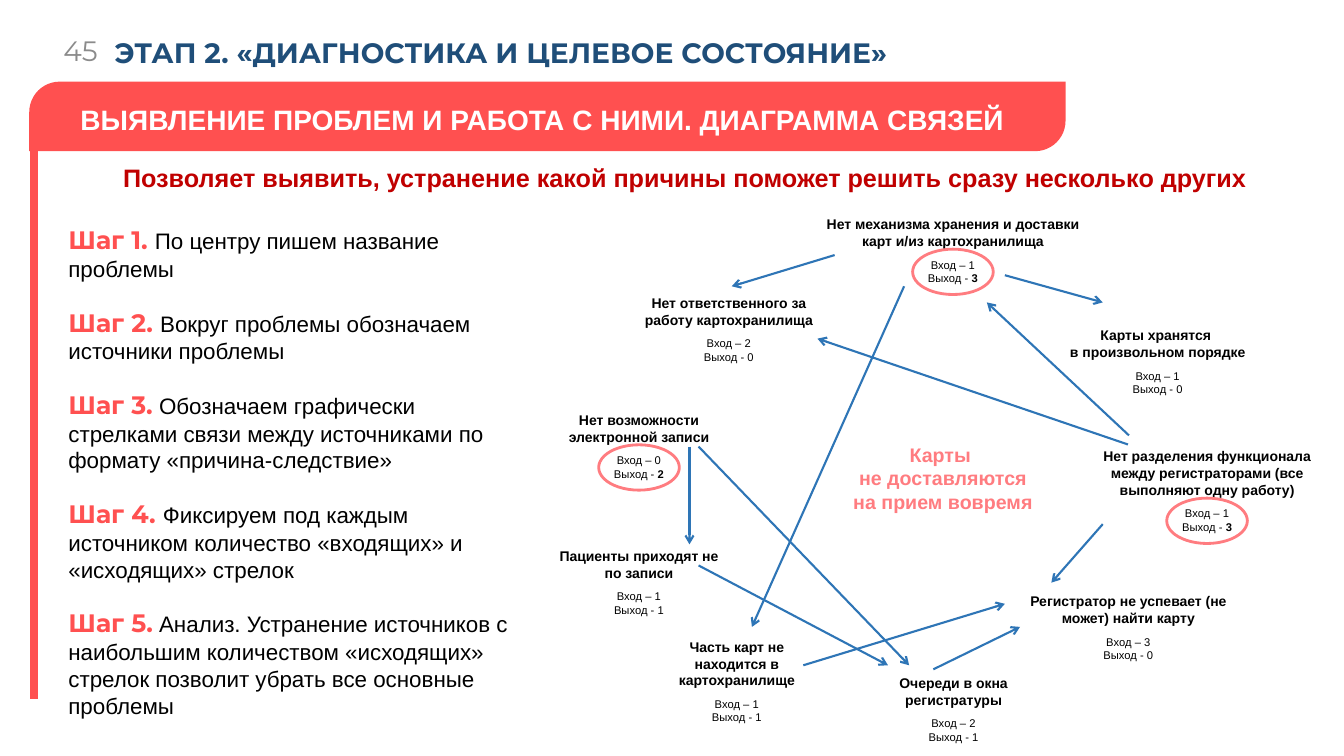
from typing import NamedTuple

from lxml import etree
from pptx import Presentation
from pptx.dml.color import RGBColor
from pptx.enum.shapes import MSO_CONNECTOR, MSO_SHAPE
from pptx.enum.text import MSO_ANCHOR, PP_ALIGN
from pptx.oxml.ns import qn
from pptx.util import Pt

LEFT, CENTER, RIGHT = PP_ALIGN.LEFT, PP_ALIGN.CENTER, PP_ALIGN.RIGHT
TOP, MIDDLE = MSO_ANCHOR.TOP, MSO_ANCHOR.MIDDLE
STRAIGHT = MSO_CONNECTOR.STRAIGHT
RED, PINK, BLUE = "FF5050", "FF7C80", "2E75B6"
WHITE, BLACK = "FFFFFF", "000000"
HEADING_FONT, BODY_FONT = "Montserrat", "Arial"


class Cause(NamedTuple):
    text: str
    left: float
    top: float
    width: float
    inputs: int
    outputs: int
    height: float = 63.4
    key: bool = False


class Arrow(NamedTuple):
    x1: float
    y1: float
    x2: float
    y2: float


class Step(NamedTuple):
    label: str
    text: str


CAUSES = [
    Cause("Нет механизма хранения и доставки карт и/из картохранилища",
          573.8, 147.6, 213.8, 1, 3, key=True),
    Cause("Карты хранятся \nв произвольном порядке", 738.7, 226.8, 176.4, 1, 0),
    Cause("Нет разделения функционала между регистраторами (все выполняют одну работу)",
          774, 312.5, 176.4, 1, 3, height=76.3, key=True),
    Cause("Регистратор не успевает (не может) найти карту", 717.8, 416.9, 176.4, 3, 0),
    Cause("Очереди в окна регистратуры", 611.3, 475.2, 139.7, 2, 1),
    Cause("Часть карт не находится в картохранилище", 456.5, 448.6, 139.7, 1, 1, height=76.3),
    Cause("Пациенты приходят не по записи", 386.6, 384.5, 139.7, 1, 1),
    Cause("Нет возможности электронной записи", 386.6, 287.3, 139.7, 0, 2, key=True),
    Cause("Нет ответственного за работу картохранилища", 445, 203.8, 151.2, 2, 0),
]

ARROWS = [
    Arrow(805.7, 317.5, 583.9, 241.9),
    Arrow(806.4, 311, 704.9, 216),
    Arrow(645.8, 204.5, 537.1, 447.8),
    Arrow(499, 319, 649.4, 475.2),
    Arrow(499, 403.9, 634.3, 475.2),
    Arrow(573.8, 475.2, 717.8, 431.3),
    Arrow(666.7, 478.1, 728.6, 447.8),
    Arrow(787.7, 374.4, 751, 416.2),
    Arrow(717.8, 196.6, 787.7, 216),
    Arrow(596.2, 182.2, 522.7, 204.5),
    Arrow(492.5, 319, 492.5, 388.8),
]

STEPS = [
    Step("Шаг 1. ", "По центру пишем название проблемы"),
    Step("Шаг 2. ", "Вокруг проблемы обозначаем источники проблемы"),
    Step("Шаг 3.", " Обозначаем графически стрелками связи между источниками "
                   "по формату «причина-следствие»"),
    Step("Шаг 4. ", "Фиксируем под каждым источником количество «входящих» "
                    "и «исходящих» стрелок"),
    Step("Шаг 5.", " Анализ. Устранение источников с наибольшим количеством «исходящих» "
                   "стрелок позволит убрать все основные проблемы"),
]


def rgb(color: str) -> RGBColor:
    return RGBColor.from_string(color)


def add_shape(s, kind, left: float, top: float, width: float, height: float,
              fill: str = "", line: str = "", anchor=TOP):
    sp = s.shapes.add_shape(kind, Pt(left), Pt(top), Pt(width), Pt(height))
    sp.shadow.inherit = False
    if fill:
        sp.fill.solid()
        sp.fill.fore_color.rgb = rgb(fill)
    else:
        sp.fill.background()
    if line:
        sp.line.color.rgb = rgb(line)
        sp.line.width = Pt(2)
    else:
        sp.line.fill.background()
    sp.text_frame.word_wrap = True
    sp.text_frame.vertical_anchor = anchor
    return sp


def add_line(s, ends: Arrow, color: str, width: float, arrowhead: bool = False) -> None:
    cn = s.shapes.add_connector(STRAIGHT, *(Pt(v) for v in ends))
    cn.line.color.rgb = rgb(color)
    cn.line.width = Pt(width)
    if arrowhead:
        etree.SubElement(cn.line._get_or_add_ln(), qn("a:tailEnd"), type="arrow")
    etree.SubElement(cn._element.spPr, qn("a:effectLst"))


def next_paragraph(tf, align=LEFT, before: float = 0):
    """Return the empty first paragraph, or a new one with space before it."""
    p = tf.paragraphs[0]
    if p.runs:
        p = tf.add_paragraph()
        p.space_before = Pt(before)
    p.alignment = align
    return p


def write(p, text: str, size: float = 10, color: str = BLACK,
          bold: bool = False, font: str = BODY_FONT) -> None:
    """Add text to a paragraph, turning each newline into a line break."""
    for i, part in enumerate(text.split("\n")):
        if i:
            p.add_line_break()
            etree.SubElement(p._p[-1], qn("a:rPr"), sz=str(round(size * 100)))
        r = p.add_run()
        r.text = part
        r.font.name = font
        r.font.size = Pt(size)
        r.font.bold = bold
        r.font.color.rgb = rgb(color)


def add_label(s, text: str, left: float, top: float, width: float, height: float,
              align=LEFT, anchor=TOP, **fmt) -> None:
    tb = s.shapes.add_textbox(Pt(left), Pt(top), Pt(width), Pt(height))
    tf = tb.text_frame
    tf.word_wrap = True
    tf.vertical_anchor = anchor
    write(next_paragraph(tf, align), text, **fmt)


def add_cause(s, c: Cause) -> None:
    sp = add_shape(s, MSO_SHAPE.ROUNDED_RECTANGLE, c.left, c.top, c.width, c.height)
    tf = sp.text_frame
    write(next_paragraph(tf, CENTER), c.text, bold=True)
    write(next_paragraph(tf, CENTER, before=6), f"Вход – {c.inputs}", size=8)
    p = next_paragraph(tf, CENTER)
    write(p, "Выход - ", size=8)
    write(p, str(c.outputs), size=8, bold=c.key)


def add_key_mark(s, c: Cause) -> None:
    """Circle the arrow counts at the foot of a key cause."""
    width, height = 57.6, 32.4
    add_shape(s, MSO_SHAPE.OVAL, c.left + (c.width - width) / 2,
              c.top + c.height - 33, width, height, line=PINK)


def add_steps(s) -> None:
    sp = add_shape(s, MSO_SHAPE.DOUBLE_BRACKET, 31, 147.6, 350, 378.7,
                   fill=WHITE, anchor=MIDDLE)
    sp.adjustments[0] = 0.105
    for step in STEPS:
        p = next_paragraph(sp.text_frame, before=18)
        write(p, step.label, size=18, color=RED, bold=True, font=HEADING_FONT)
        write(p, step.text, size=16)


def main() -> None:
    prs = Presentation()
    prs.slide_width, prs.slide_height = Pt(960), Pt(540)
    s = prs.slides.add_slide(prs.slide_layouts[6])

    banner = add_shape(s, MSO_SHAPE.ROUND_2_DIAG_RECTANGLE, 20.9, 58.3, 740.2, 49.7, fill=RED)
    banner.adjustments[0], banner.adjustments[1] = 0.437, 0
    add_line(s, Arrow(24.5, 98.6, 24.5, 499), RED, 6)
    add_label(s, "45", 0, 16.6, 77, 38.9, RIGHT, MIDDLE,
              size=20, color="8B8B8B", font=HEADING_FONT)
    add_label(s, "Позволяет выявить, устранение какой причины поможет решить сразу несколько других",
              69.1, 112.3, 840.2, 28.8, CENTER, size=18, color="C00000", bold=True)
    add_label(s, "ЭТАП 2. «ДИАГНОСТИКА И ЦЕЛЕВОЕ СОСТОЯНИЕ»", 74.9, 18, 794.9, 38.9,
              anchor=MIDDLE, size=20, color="1F4E79", bold=True, font=HEADING_FONT)
    add_label(s, "ВЫЯВЛЕНИЕ ПРОБЛЕМ И РАБОТА С НИМИ. ДИАГРАММА СВЯЗЕЙ",
              50.4, 69.8, 706.3, 31.7, size=20, color=WHITE, bold=True)

    for cause in CAUSES:
        add_cause(s, cause)
    for arrow in ARROWS:
        add_line(s, arrow, BLUE, 1.5, arrowhead=True)
    problem = add_shape(s, MSO_SHAPE.ROUNDED_RECTANGLE, 594, 309.6, 159.1, 64.1)
    write(next_paragraph(problem.text_frame, CENTER),
          "Карты \nне доставляются на прием вовремя", size=14, color=PINK, bold=True)
    for cause in CAUSES:
        if cause.key:
            add_key_mark(s, cause)
    add_steps(s)
    prs.save("out.pptx")


if __name__ == "__main__":
    main()
